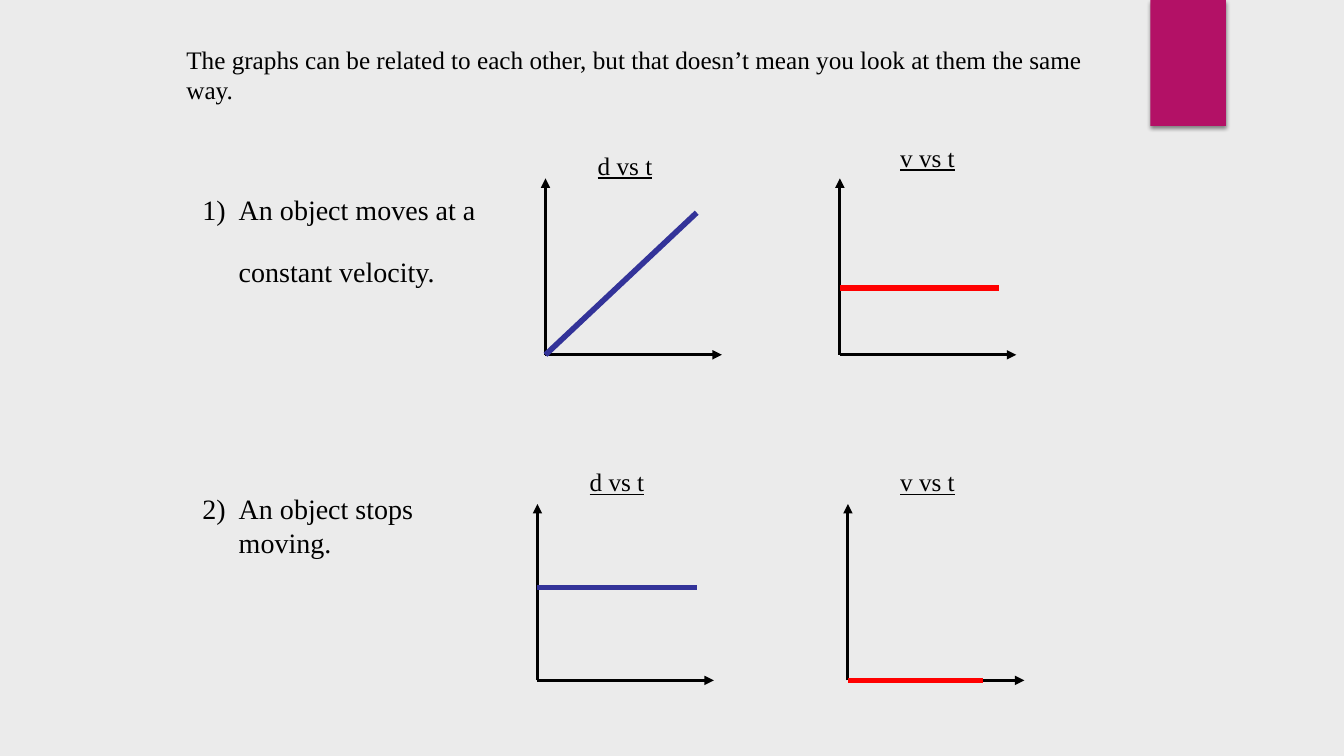
"""Build a slide relating distance-time and velocity-time graphs."""
from lxml import etree
from pptx import Presentation
from pptx.dml.color import RGBColor
from pptx.enum.shapes import MSO_CONNECTOR, MSO_SHAPE
from pptx.oxml import parse_xml
from pptx.oxml.ns import nsdecls, qn
from pptx.util import Inches, Pt

STRAIGHT = MSO_CONNECTOR.STRAIGHT
RECTANGLE = MSO_SHAPE.RECTANGLE
FONT = "Times New Roman"
BLACK, BLUE, RED = "000000", "333399", "FF0000"
AXIS_LENGTH = 1.75
HANGING = 0.36


def add_text(left, top, width, height, lines, size, underline=False, indent=0):
    box = page.shapes.add_textbox(Inches(left), Inches(top), Inches(width), Inches(height))
    frame = box.text_frame
    frame.word_wrap = True
    for index, line in enumerate(lines):
        para = frame.paragraphs[0] if index == 0 else frame.add_paragraph()
        properties = para._p.get_or_add_pPr()
        properties.set("marL", str(Inches(indent)))
        properties.set("indent", str(-Inches(indent) if index == 0 else 0))
        if index:
            para.space_before = Pt(20.5)
        span = para.add_run()
        span.text = line
        span.font.name = FONT
        span.font.size = Pt(size)
        span.font.underline = underline
        span.font.color.rgb = RGBColor.from_string(BLACK)


def add_line(start, end, color, width, arrow=False):
    line = page.shapes.add_connector(STRAIGHT, *map(Inches, start + end))
    line.line.color.rgb = RGBColor.from_string(color)
    line.line.width = Pt(width)
    if arrow:
        tail = etree.SubElement(line.line._get_or_add_ln(), qn("a:tailEnd"))
        tail.set("type", "triangle")
    etree.SubElement(line._element.spPr, qn("a:effectLst"))


deck = Presentation()
deck.slide_width, deck.slide_height = Inches(13.33), Inches(7.5)
page = deck.slides.add_slide(deck.slide_layouts[6])
page.background.fill.solid()
page.background.fill.fore_color.rgb = RGBColor.from_string("EBEBEB")

ribbon = page.shapes.add_shape(RECTANGLE, Inches(11.41), 0, Inches(0.75), Inches(1.25))
ribbon.fill.solid()
ribbon.fill.fore_color.rgb = RGBColor.from_string("B31166")
ribbon.line.fill.background()
ribbon._element.spPr.append(parse_xml(
    f'<a:effectLst {nsdecls("a")}>'
    f'<a:outerShdw blurRad="{Pt(3)}" dist="{Pt(2)}" dir="5400000" rotWithShape="0">'
    '<a:srgbClr val="000000"><a:alpha val="45000"/></a:srgbClr>'
    '</a:outerShdw></a:effectLst>'))

add_text(1.75, 0.39, 9.42, 0.71, [
    "The graphs can be related to each other, but that doesn’t mean "
    "you look at them the same way."], 18)
add_text(1.91, 1.86, 3.17, 0.7,
         ["1)\tAn object moves at a", "constant velocity."], 20, indent=HANGING)
add_text(1.91, 4.83, 3.17, 0.77,
         ["2)\tAn object stops moving."], 20, indent=HANGING)

graphs = [
    ("d vs t", (5.83, 1.44), (5.41, 3.52), (5.41, 3.52), (6.91, 2.11), BLUE),
    ("v vs t", (8.83, 1.36), (8.33, 3.52), (8.33, 2.86), (9.91, 2.86), RED),
    ("d vs t", (5.75, 4.58), (5.33, 6.75), (5.33, 5.83), (6.91, 5.83), BLUE),
    ("v vs t", (8.83, 4.58), (8.41, 6.75), (8.41, 6.75), (9.75, 6.75), RED),
]
for title, title_at, origin, start, end, color in graphs:
    x, y = origin
    add_text(*title_at, 1.17, 0.4, [title], 18, underline=True)
    add_line(origin, (x, y - AXIS_LENGTH), BLACK, 2.25, arrow=True)
    add_line(origin, (x + AXIS_LENGTH, y), BLACK, 2.25, arrow=True)
    add_line(start, end, color, 4)

deck.save("out.pptx")
